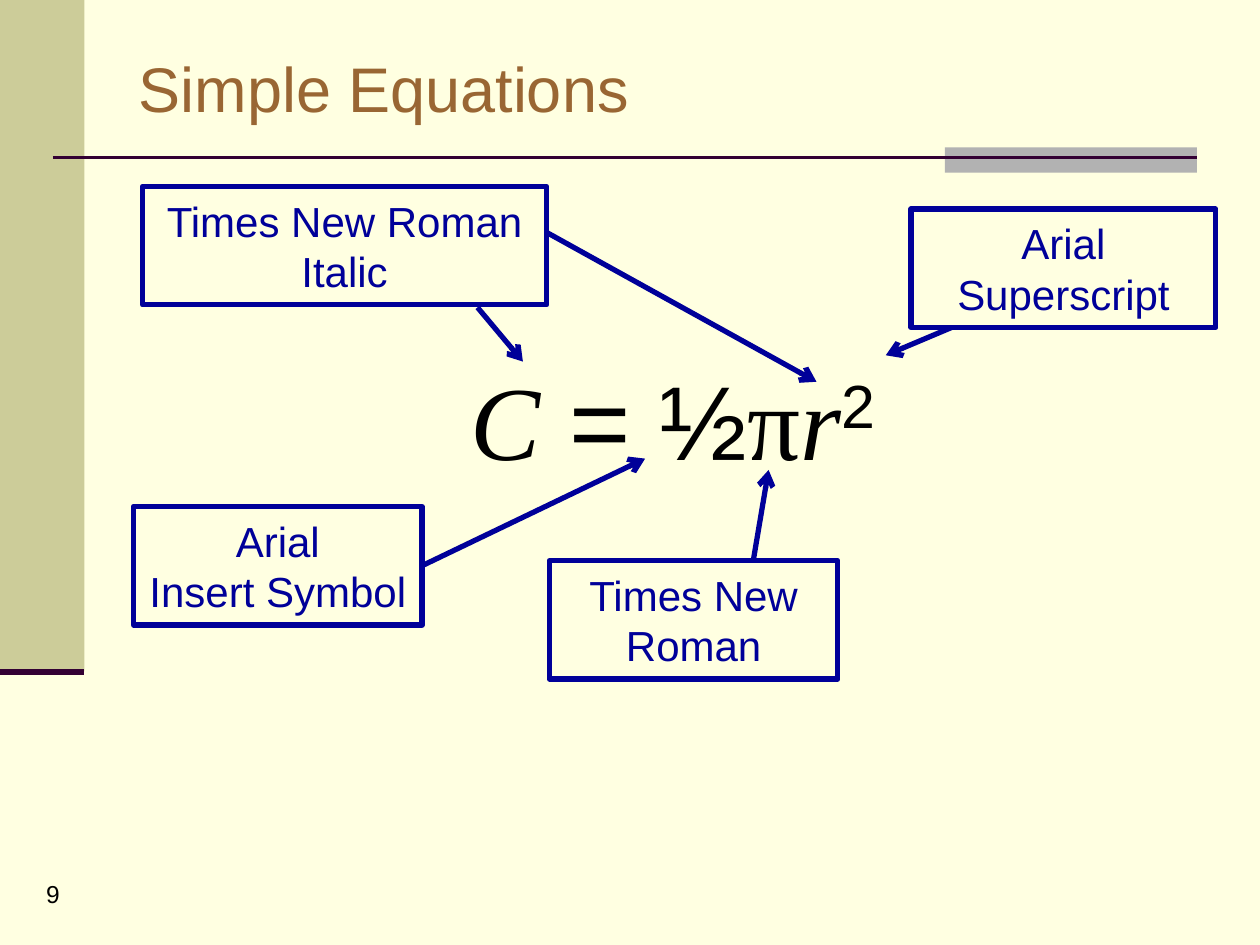
from lxml import etree
from pptx import Presentation
from pptx.dml.color import RGBColor
from pptx.enum import shapes, text
from pptx.oxml import ns
from pptx.util import Inches, Pt

CREAM = RGBColor(0xFF, 0xFF, 0xE1)
OLIVE = RGBColor(0xCC, 0xCC, 0x99)
GREY = RGBColor(0xB2, 0xB2, 0xB2)
PLUM = RGBColor(0x33, 0x00, 0x33)
BROWN = RGBColor(0x99, 0x66, 0x33)
NAVY = RGBColor(0x00, 0x00, 0x99)
BLACK = RGBColor(0, 0, 0)
SANS, SERIF = "Arial", "Times New Roman"
LEFT, CENTER = text.PP_ALIGN.LEFT, text.PP_ALIGN.CENTER
RIGHT_SIDE = 3

# Content: boxes are left, top, width, height
TITLE = "Simple Equations"
EQUATION = [  # text, font, italic, superscript
    ("C", SERIF, True, False),
    (" = ½", SANS, False, False),
    ("π", SERIF, False, False),
    ("r", SERIF, True, False),
    ("2", SANS, False, True),
]
BANDS = [((0, 0, 0.67, 5.33), OLIVE), ((7.5, 1.17, 2, 0.2), GREY)]
RULES = [((0.42, 1.25), (9.5, 1.25), 1.5), ((0, 5.33), (0.67, 5.33), 3.5)]
LABEL_HEIGHT = 0.94
LABELS = [  # lines, left, top, width, arrows (start, end, joined side)
    (["Times New Roman", "Italic"], 1.13, 1.48, 3.21,
     [((3.79, 2.44), (4.15, 2.87), None), ((4.33, 1.84), (6.48, 3.03), None)]),
    (["Arial", "Insert Symbol"], 1.06, 4.02, 2.29,
     [((3.35, 4.49), (5.12, 3.64), RIGHT_SIDE)]),
    (["Arial Superscript"], 7.23, 1.66, 2.42,
     [((7.55, 2.6), (7.03, 2.82), None)]),
    (["Times New Roman"], 4.36, 4.45, 2.29,
     [((5.98, 4.44), (6.1, 3.73), None)]),
]


def inches(values):
    return [Inches(value) for value in values]


def add_run(paragraph, words, **font_format):
    run = paragraph.add_run()
    run.text = words
    color = font_format.pop("color")
    for name, value in font_format.items():
        setattr(run.font, name, value)
    run.font.color.rgb = color
    return run


def add_rectangle(slide, box):
    shape = slide.shapes.add_shape(shapes.MSO_SHAPE.RECTANGLE, *inches(box))
    shape.shadow.inherit = False
    return shape


def add_line(slide, start, end, color, width, arrow=False):
    line = slide.shapes.add_connector(
        shapes.MSO_CONNECTOR.STRAIGHT, *inches(start + end))
    line.line.color.rgb = color
    line.line.width = Pt(width)
    if arrow:
        etree.SubElement(line.line._get_or_add_ln(), ns.qn("a:tailEnd"), type="arrow")
    etree.SubElement(line._element.spPr, ns.qn("a:effectLst"))
    return line


def add_text_box(slide, box):
    frame = slide.shapes.add_textbox(*inches(box)).text_frame
    frame.word_wrap = True
    frame.paragraphs[0].alignment = CENTER
    return frame


def add_label(slide, lines, left, top, width, arrows):
    shape = add_rectangle(slide, (left, top, width, LABEL_HEIGHT))
    shape.fill.background()
    shape.line.color.rgb = NAVY
    shape.line.width = Pt(3)
    frame = shape.text_frame
    frame.word_wrap = True
    for index, words in enumerate(lines):
        paragraph = frame.add_paragraph() if index else frame.paragraphs[0]
        paragraph.alignment = CENTER
        add_run(paragraph, words, name=SANS, size=Pt(24), color=NAVY)
    for start, end, side in arrows:
        arrow = add_line(slide, start, end, NAVY, 3, arrow=True)
        if side is not None:
            arrow.begin_connect(shape, side)


def main():
    presentation = Presentation()
    presentation.slide_width, presentation.slide_height = inches((10, 7.5))
    slide = presentation.slides.add_slide(presentation.slide_layouts[5])
    slide.background.fill.solid()
    slide.background.fill.fore_color.rgb = CREAM

    # Side band, grey bar and rules
    for box, color in BANDS:
        band = add_rectangle(slide, box)
        band.fill.solid()
        band.fill.fore_color.rgb = color
        band.line.fill.background()
    for start, end, width in RULES:
        add_line(slide, start, end, PLUM, width)

    # Title
    title = slide.shapes.title
    title.left, title.top, title.width, title.height = inches((1, 0.3, 8.5, 0.78))
    title.text_frame.vertical_anchor = text.MSO_ANCHOR.MIDDLE
    paragraph = title.text_frame.paragraphs[0]
    paragraph.alignment = LEFT
    add_run(paragraph, TITLE, name=SANS, size=Pt(36), color=BROWN)

    # Slide number
    number = add_text_box(slide, (0.16, 6.93, 0.52, 0.33))
    add_run(number.paragraphs[0], "9", name=SANS, size=Pt(14), color=BLACK)

    # Equation
    equation = add_text_box(slide, (1.09, 2.68, 8.5, 1))
    equation.margin_top = Inches(0.14)
    for words, font, italic, superscript in EQUATION:
        run = add_run(equation.paragraphs[0], words, name=font, size=Pt(60),
                      italic=italic, color=BLACK)
        if superscript:
            run.font._element.set("baseline", "30000")

    # Labels with their arrows
    for label in LABELS:
        add_label(slide, *label)

    presentation.save("out.pptx")


if __name__ == "__main__":
    main()
